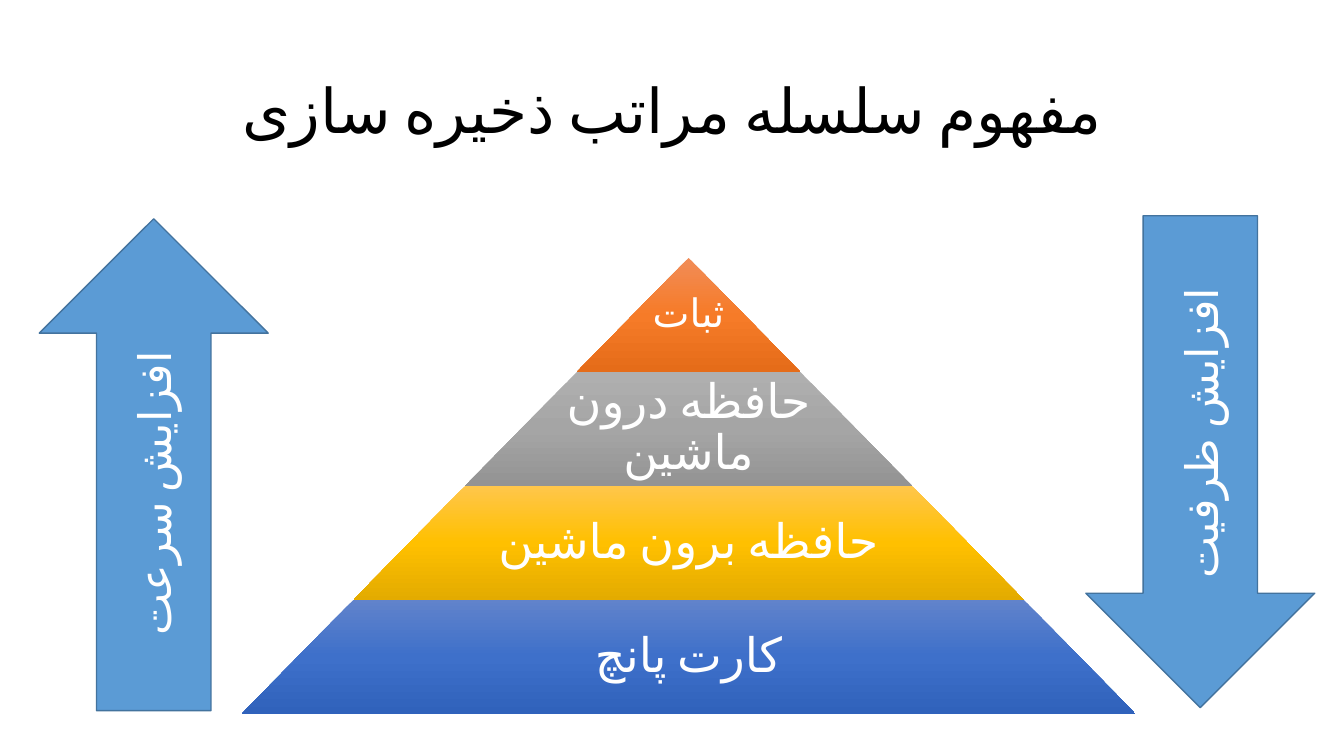
from copy import deepcopy

from lxml import etree
from pptx import Presentation
from pptx.dml.color import RGBColor
from pptx.enum.shapes import MSO_SHAPE
from pptx.enum.text import MSO_ANCHOR, PP_ALIGN
from pptx.oxml.ns import qn
from pptx.util import Emu, Pt

PX = 9144  # 100 px to the inch
FONT = "Calibri"
BLACK = RGBColor(0x00, 0x00, 0x00)
WHITE = RGBColor(0xFF, 0xFF, 0xFF)
ARROW_BLUE = RGBColor(0x5B, 0x9B, 0xD5)
ARROW_EDGE = RGBColor(0x43, 0x73, 0x9E)
ORANGE = [RGBColor(0xF1, 0x8C, 0x57), RGBColor(0xF6, 0x7B, 0x28), RGBColor(0xE5, 0x6C, 0x19)]
GRAY = [RGBColor(0xAF, 0xAF, 0xAF), RGBColor(0xA5, 0xA5, 0xA5), RGBColor(0x93, 0x93, 0x93)]
GOLD = [RGBColor(0xFF, 0xC6, 0x4B), RGBColor(0xFF, 0xC0, 0x00), RGBColor(0xE3, 0xAB, 0x00)]
BLUE = [RGBColor(0x61, 0x83, 0xCB), RGBColor(0x3E, 0x70, 0xCA), RGBColor(0x30, 0x62, 0xBB)]

# Text, size, gradient, text width as a share of the level's width
LEVELS = [
    ("ثبات", 28, ORANGE, 1),
    ("حافظه درون ماشین", 34, GRAY, 0.65),
    ("حافظه برون ماشین", 34, GOLD, 0.65),
    ("کارت پانچ", 34, BLUE, 0.65),
]


def px(*lengths):
    return [Emu(round(n * PX)) for n in lengths]


def write(sp, text, size, color, spacing=None):
    tf = sp.text_frame
    tf.word_wrap = True
    tf.vertical_anchor = MSO_ANCHOR.MIDDLE
    p = tf.paragraphs[0]
    p.alignment = PP_ALIGN.CENTER
    p.line_spacing = spacing
    r = p.add_run()
    r.text = text
    r.font.size = Pt(size)
    r.font.name = FONT
    r.font.color.rgb = color
    # Persian text takes the complex-script font
    rPr = r._r.get_or_add_rPr()
    rPr.set("lang", "fa-IR")
    etree.SubElement(rPr, qn("a:cs")).set("typeface", FONT)
    return tf


def fill_gradient(sp, colors):
    sp.fill.gradient()
    sp.fill.gradient_angle = 270  # top to bottom
    stop_list = sp.fill._xPr.find(".//" + qn("a:gsLst"))
    stop_list.append(deepcopy(stop_list[-1]))
    for stop, position, color in zip(sp.fill.gradient_stops, (0, 0.5, 1), colors):
        stop.position = position
        stop.color.rgb = color


def add_title(s, left, top, width, height):
    sp = s.shapes.add_textbox(*px(left, top, width, height))
    tf = write(sp, "مفهوم سلسله مراتب ذخیره سازی", 44, BLACK, 0.9)
    tf.paragraphs[0]._p.get_or_add_pPr().set("rtl", "1")


def add_pyramid(s, left, top, width, height):
    step = width / len(LEVELS)
    level_height = height / len(LEVELS)
    center = left + width / 2
    for i, (text, size, colors, share) in enumerate(LEVELS):
        level_width = step * (i + 1)
        y = top + i * level_height
        sp = s.shapes.add_shape(
            MSO_SHAPE.TRAPEZOID,
            *px(center - level_width / 2, y, level_width, level_height))
        sp.adjustments[0] = step / 2 / level_height
        sp.shadow.inherit = False
        sp.line.fill.background()
        fill_gradient(sp, colors)

        # Label in the level's inner part
        text_width = level_width * share
        label = s.shapes.add_textbox(
            *px(center - text_width / 2, y, text_width, level_height))
        tf = write(label, text, size, WHITE, 0.9)
        inset = px(4 if size < 30 else 5)[0]
        tf.margin_left = tf.margin_right = tf.margin_top = tf.margin_bottom = inset


def add_arrow(s, left, top, width, height, text, rotation, direction):
    sp = s.shapes.add_shape(MSO_SHAPE.DOWN_ARROW, *px(left, top, width, height))
    sp.rotation = rotation
    sp.shadow.inherit = False
    sp.fill.solid()
    sp.fill.fore_color.rgb = ARROW_BLUE
    sp.line.color.rgb = ARROW_EDGE
    sp.line.width = Pt(1)
    tf = write(sp, text, 32, WHITE)
    tf._txBody.bodyPr.set("vert", direction)


def main():
    prs = Presentation()
    prs.slide_width, prs.slide_height = px(1333, 750)
    s = prs.slides.add_slide(prs.slide_layouts[6])
    add_title(s, 92, 40, 1150, 145)
    add_pyramid(s, 240, 256, 886, 452)
    add_arrow(s, 1077, 214, 227, 488, "افزایش ظرفیت", 0, "vert270")
    add_arrow(s, 39, 217, 227, 488, "افزایش سرعت", 180, "vert")
    prs.save("out.pptx")


if __name__ == "__main__":
    main()
